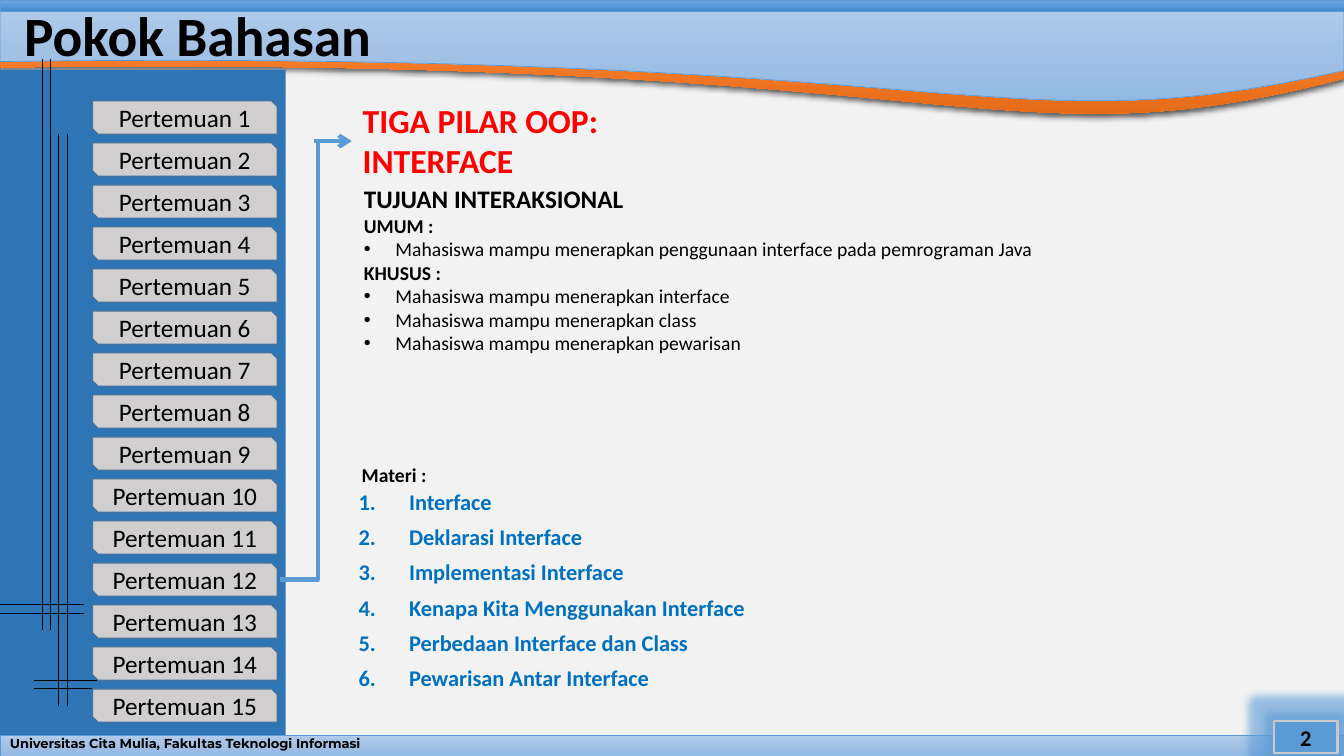
from dataclasses import dataclass
from typing import Optional

from lxml.etree import SubElement
from pptx import Presentation
from pptx.dml.color import RGBColor
from pptx.enum.shapes import MSO_CONNECTOR, MSO_SHAPE
from pptx.enum.text import MSO_ANCHOR, MSO_AUTO_SIZE, PP_ALIGN
from pptx.oxml.ns import qn
from pptx.util import Pt

COLORS = {
    "black": "000000", "page": "F2F2F2", "page_line": "A5A5A5", "blue": "5B9BD5",
    "panel": "2E75B6", "button": "D0CECE", "button_line": "43739E",
    "number_line": "C9C9C9", "heading": "FF0000", "topic": "0070C0",
}
GRADIENTS = {
    "orange": ("F18C57", "F67B28", "E56C19"),
    "light": ("B1CBE9", "A3C1E5", "93B9E4"),
    "strong": ("71A6DB", "559BDB", "448ACA"),
}
W, H = 960, 540


@dataclass
class Box:
    left: float
    top: float
    width: float
    height: float
    fill: str
    line: Optional[str] = None
    weight: float = 0.5
    kind: MSO_SHAPE = MSO_SHAPE.RECTANGLE


@dataclass
class Wave:
    """A band from the top edge down to a cubic curve."""
    top: float
    curve: tuple
    fill: str
    line: Optional[str] = None


@dataclass
class Rule:
    x1: float
    y1: float
    x2: float
    y2: float
    color: str = "black"
    weight: float = 0.5
    arrow: bool = False


@dataclass
class Para:
    text: str
    size: float
    bold: bool = True
    bullet: str = ""
    indent: float = 0


def rgb(name):
    return RGBColor.from_string(COLORS[name])


def paint(sp, fill: str, line: Optional[str], weight: float = 0.5) -> None:
    sp.shadow.inherit = False
    if fill in GRADIENTS:
        sp.fill.gradient()
        sp.fill.gradient_angle = 270
        stops = sp._element.spPr.find(qn("a:gradFill")).find(qn("a:gsLst"))
        for stop in list(stops):
            stops.remove(stop)
        for i, color in enumerate(GRADIENTS[fill]):
            stop = SubElement(stops, qn("a:gs"), pos=str(i * 50000))
            SubElement(stop, qn("a:srgbClr"), val=color)
    else:
        sp.fill.solid()
        sp.fill.fore_color.rgb = rgb(fill)
    if line:
        sp.line.color.rgb = rgb(line)
        sp.line.width = Pt(weight)
    else:
        sp.line.fill.background()


def add_effect(sp, tag: str, color: str, alpha: int, **attrs: str) -> None:
    effects = sp._element.spPr.find(qn("a:effectLst"))
    clr = SubElement(SubElement(effects, qn(tag), **attrs), qn("a:srgbClr"), val=COLORS[color])
    SubElement(clr, qn("a:alpha"), val=str(alpha * 1000))


def add_box(shapes, b: Box):
    sp = shapes.add_shape(b.kind, Pt(b.left), Pt(b.top), Pt(b.width), Pt(b.height))
    paint(sp, b.fill, b.line, b.weight)
    return sp


def add_wave(shapes, wave: Wave, steps: int = 60):
    points = []
    for i in range(steps + 1):
        t = i / steps
        weights = ((1 - t) ** 3, 3 * t * (1 - t) ** 2, 3 * t * t * (1 - t), t ** 3)
        points.append(tuple(Pt(sum(w * p[axis] for w, p in zip(weights, wave.curve)))
                            for axis in (0, 1)))
    builder = shapes.build_freeform(Pt(W), Pt(wave.top))
    builder.add_line_segments([(Pt(0), Pt(wave.top)), *points], close=True)
    sp = builder.convert_to_shape()
    paint(sp, wave.fill, wave.line)
    return sp


def add_rule(shapes, rule: Rule, kind: MSO_CONNECTOR = MSO_CONNECTOR.STRAIGHT):
    cx = shapes.add_connector(kind, Pt(rule.x1), Pt(rule.y1), Pt(rule.x2), Pt(rule.y2))
    cx.line.color.rgb = rgb(rule.color)
    cx.line.width = Pt(rule.weight)
    if rule.arrow:
        SubElement(cx.line._get_or_add_ln(), qn("a:tailEnd"), type="arrow")
    SubElement(cx._element.spPr, qn("a:effectLst"))
    return cx


def write(sp, paras: list[Para], color: str = "black", font: str = "Calibri",
          align=PP_ALIGN.LEFT, anchor=MSO_ANCHOR.TOP, before: float = 0,
          spacing: float = 1.0, wrap: bool = True) -> None:
    tf = sp.text_frame
    tf.auto_size = MSO_AUTO_SIZE.NONE
    tf.word_wrap = wrap
    tf.vertical_anchor = anchor
    for i, para in enumerate(paras):
        p = tf.add_paragraph() if i else tf.paragraphs[0]
        p.alignment, p.line_spacing, p.space_before = align, spacing, Pt(before)
        pPr = p._p.get_or_add_pPr()
        pPr.set("marL", str(Pt(para.indent)))
        pPr.set("indent", str(-Pt(para.indent)))
        if para.bullet == "1.":
            SubElement(pPr, qn("a:buFont"), typeface="+mj-lt")
            SubElement(pPr, qn("a:buAutoNum"), type="arabicPeriod")
        elif para.bullet:
            SubElement(pPr, qn("a:buFont"), typeface="Arial")
            SubElement(pPr, qn("a:buChar"), char=para.bullet)
        else:
            SubElement(pPr, qn("a:buNone"))
        r = p.add_run()
        r.text = para.text
        r.font.name, r.font.size, r.font.bold = font, Pt(para.size), para.bold
        r.font.color.rgb = rgb(color)


def place(sp, left: float, top: float, width: float, height: float):
    """Position a placeholder and bring it to the front."""
    sp.left, sp.top, sp.width, sp.height = Pt(left), Pt(top), Pt(width), Pt(height)
    sp._element.getparent().append(sp._element)
    return sp


def add_text(shapes, left: float, top: float, width: float, height: float):
    return shapes.add_textbox(Pt(left), Pt(top), Pt(width), Pt(height))


def main() -> None:
    prs = Presentation()
    prs.slide_width, prs.slide_height = Pt(W), Pt(H)
    slide = prs.slides.add_slide(prs.slide_layouts.get_by_name("Two Content"))
    shapes = slide.shapes
    title, goals, topics = list(slide.placeholders)
    middle = MSO_ANCHOR.MIDDLE

    add_box(shapes, Box(0, 3, W, 537, "page", "page_line"))
    orange = add_wave(shapes, Wave(
        0.7, ((0, 48.2), (702.7, 38.2), (709.9, 121), (W, 56.2)), "orange"))
    add_effect(orange, "a:outerShdw", "black", 63, blurRad=str(Pt(4.5)),
               dist=str(Pt(1.5)), dir="5400000", rotWithShape="0")
    add_wave(shapes, Wave(
        3, ((0, 44), (702.7, 34.6), (709.9, 106.6), (W, 50.4)), "light", "blue"))
    add_box(shapes, Box(0, 525, W, 15, "light", "blue"))
    add_box(shapes, Box(0, 0, W, 8, "strong", "blue"))
    write(add_text(shapes, 0, 525, W, 15),
          [Para("Universitas Cita Mulia, Fakultas Teknologi Informasi", 9.3)],
          font="Montserrat", anchor=middle, spacing=0.7)
    number = add_box(shapes, Box(910, 515, 45.4, 23, "blue", "number_line", 1.5))
    add_effect(number, "a:glow", "blue", 60, rad=str(Pt(12)))
    write(number, [Para("2", 16)], align=PP_ALIGN.CENTER, anchor=middle)

    write(place(title, 10, 5.8, 914, 44), [Para("Pokok Bahasan", 39.6)],
          anchor=middle, spacing=0.9)

    add_box(shapes, Box(0, 49.7, 204, 475.3, "panel"))
    verticals = [Rule(x, y, x, y + 408) for x, y in ((30, 42), (36, 42), (42, 96), (48, 96))]
    horizontals = [Rule(x, y, x + length, y) for x, y, length in
                   ((24, 486, 84), (24, 492, 84), (0, 438, 60), (0, 432, 60))]
    for rule in verticals + horizontals:
        add_rule(shapes, rule)

    for i in range(15):
        button = add_box(shapes, Box(66, 72 + 30 * i, 132, 24, "button", "button_line", 1,
                                     MSO_SHAPE.SNIP_2_DIAG_RECTANGLE))
        write(button, [Para(f"Pertemuan {i + 1}", 18, bold=False)],
              align=PP_ALIGN.CENTER, anchor=middle)

    elbow = add_rule(shapes, Rule(370.1, 270.8, 56.9, 244, "blue", 3), MSO_CONNECTOR.ELBOW)
    spPr = elbow._element.spPr
    spPr.find(qn("a:xfrm")).set("rot", "5400000")
    guides = spPr.find(qn("a:prstGeom")).find(qn("a:avLst"))
    SubElement(guides, qn("a:gd"), name="adj1", fmla="val 0")
    add_rule(shapes, Rule(224, 100.8, 251.3, 100.8, "blue", 3, arrow=True))

    write(add_text(shapes, 252, 67.7, 523.4, 65.5),
          [Para("TIGA PILAR OOP:", 24), Para("INTERFACE", 24)], color="heading")
    write(place(topics, 249, 345, 462, 154),
          [Para(text, 16, bullet="1.", indent=36) for text in (
              "Interface", "Deklarasi Interface", "Implementasi Interface",
              "Kenapa Kita Menggunakan Interface", "Perbedaan Interface dan Class",
              "Pewarisan Antar Interface")],
          color="topic", before=6)
    skills = [Para(f"Mahasiswa mampu menerapkan {skill}", 14, False, "•", 22.5) for skill in (
        "penggunaan interface pada pemrograman Java", "interface", "class", "pewarisan")]
    write(place(goals, 252.7, 127.4, 500, 131),
          [Para("TUJUAN INTERAKSIONAL", 18), Para("UMUM :", 14), skills[0],
           Para("KHUSUS :", 14), *skills[1:]])
    write(add_text(shapes, 251.3, 327, 61, 24.5), [Para("Materi :", 14)], wrap=False)

    prs.save("out.pptx")


if __name__ == "__main__":
    main()
